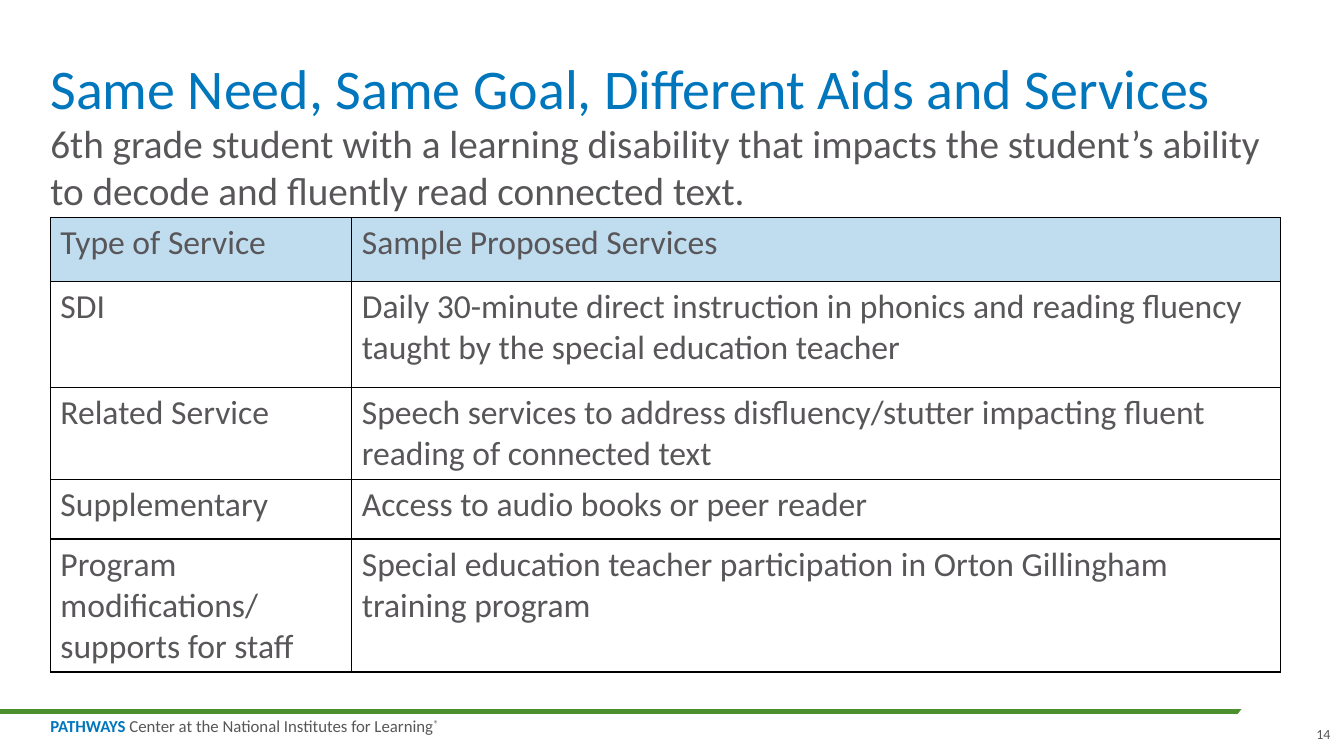
from dataclasses import dataclass

from lxml import etree
from pptx import Presentation
from pptx.dml.color import RGBColor
from pptx.enum.shapes import MSO_CONNECTOR, MSO_SHAPE
from pptx.enum.text import MSO_ANCHOR, PP_ALIGN
from pptx.oxml.ns import qn
from pptx.slide import Slide
from pptx.util import Pt

STRAIGHT = MSO_CONNECTOR.STRAIGHT
ELLIPSE = MSO_SHAPE.OVAL
TOP, BOTTOM = MSO_ANCHOR.TOP, MSO_ANCHOR.BOTTOM
LEFT, RIGHT = PP_ALIGN.LEFT, PP_ALIGN.RIGHT


@dataclass(frozen=True)
class Theme:
    font: str = "Calibri"
    blue: str = "0076BD"
    grey: str = "59565A"
    green: str = "4C902D"
    header_fill: str = "BFDDEE"
    white: str = "FFFFFF"
    border: str = "000000"
    title_size: float = 40
    body_size: float = 28
    table_size: float = 24
    footer_size: float = 12
    number_size: float = 10


@dataclass(frozen=True)
class Run:
    text: str
    color: str
    bold: bool = False
    superscript: bool = False


@dataclass(frozen=True)
class TextBlock:
    left: float
    top: float
    width: float
    height: float
    size: float
    runs: tuple[Run, ...]
    anchor: MSO_ANCHOR = TOP
    align: PP_ALIGN = LEFT
    line_spacing: float = 1.0
    wrap: bool = True


@dataclass(frozen=True)
class ServiceRow:
    height: float
    service: str
    sample: str


THEME = Theme()
MARGIN = 36
COLUMN_WIDTHS = (215.3, 663.1)
TABLE_TOP = 155.5

FOOTER = TextBlock(
    MARGIN, 513.4, 289.4, 12.2, THEME.footer_size,
    (
        Run("PATHWAYS", THEME.blue, bold=True),
        Run(" Center at the National Institutes for Learning", THEME.grey),
        Run("®", THEME.grey, superscript=True),
    ),
    line_spacing=0.85, wrap=False,
)
TITLE = TextBlock(
    MARGIN, 0, 892.8, 87.1, THEME.title_size,
    (Run("Same Need, Same Goal, Different Aids and Services", THEME.blue),),
    anchor=BOTTOM, line_spacing=0.9,
)
STUDENT = TextBlock(
    MARGIN, 85, 892.8, 56.9, THEME.body_size,
    (Run("6th grade student with a learning disability that impacts the student’s "
         "ability to decode and fluently read connected text.", THEME.grey),),
)
SLIDE_NUMBER = TextBlock(
    938.2, 518.4, 12.2, 12.2, THEME.number_size, (Run("14", THEME.grey),),
    anchor=BOTTOM, align=RIGHT, wrap=False,
)
SERVICES = (
    ServiceRow(45.4, "Type of Service", "Sample Proposed Services"),
    ServiceRow(75.9, "SDI", "Daily 30-minute direct instruction in phonics and reading "
               "fluency taught by the special education teacher"),
    ServiceRow(66, "Related Service", "Speech services to address disfluency/stutter "
               "impacting fluent reading of connected text"),
    ServiceRow(42.3, "Supplementary", "Access to audio books or peer reader"),
    ServiceRow(95, "Program modifications/ supports for staff",
               "Special education teacher participation in Orton Gillingham "
               "training program"),
)


def rgb(color: str) -> RGBColor:
    return RGBColor.from_string(color)


def add_text(slide: Slide, block: TextBlock) -> None:
    shape = slide.shapes.add_textbox(
        Pt(block.left), Pt(block.top), Pt(block.width), Pt(block.height))
    frame = shape.text_frame
    frame.word_wrap = block.wrap
    frame.vertical_anchor = block.anchor
    frame.margin_left = frame.margin_right = frame.margin_top = frame.margin_bottom = 0
    paragraph = frame.paragraphs[0]
    paragraph.alignment = block.align
    paragraph.line_spacing = block.line_spacing
    paragraph.font.name = THEME.font
    paragraph.font.size = Pt(block.size)
    for item in block.runs:
        run = paragraph.add_run()
        run.text = item.text
        run.font.name = THEME.font
        run.font.size = Pt(block.size)
        run.font.bold = item.bold
        run.font.color.rgb = rgb(item.color)
        if item.superscript:
            run.font._element.set("baseline", "30000")


def add_footer_rule(slide: Slide) -> None:
    rule = slide.shapes.add_connector(STRAIGHT, 0, Pt(508.3), Pt(936), Pt(508.3))
    rule.line.color.rgb = rgb(THEME.green)
    rule.line.width = Pt(3)
    etree.SubElement(rule._element.spPr, qn("a:effectLst"))

    # White ellipse trims the right end of the rule
    trim = slide.shapes.add_shape(ELLIPSE, Pt(875.5), Pt(487.4), Pt(85.7), Pt(41.8))
    trim.rotation = 332.1
    trim.shadow.inherit = False
    trim.fill.solid()
    trim.fill.fore_color.rgb = rgb(THEME.white)
    trim.line.fill.background()


def add_borders(cell) -> None:
    properties = cell._tc.get_or_add_tcPr()
    for index, side in enumerate(("lnL", "lnR", "lnT", "lnB")):
        line = etree.Element(qn(f"a:{side}"), w=str(Pt(1)))
        fill = etree.SubElement(line, qn("a:solidFill"))
        etree.SubElement(fill, qn("a:srgbClr"), val=THEME.border)
        properties.insert(index, line)


def add_services_table(slide: Slide, services: tuple[ServiceRow, ...]) -> None:
    height = sum(service.height for service in services)
    table = slide.shapes.add_table(
        len(services), len(COLUMN_WIDTHS), Pt(MARGIN), Pt(TABLE_TOP),
        Pt(sum(COLUMN_WIDTHS)), Pt(height)).table
    table.horz_banding = False
    for column, width in zip(table.columns, COLUMN_WIDTHS):
        column.width = Pt(width)
    for index, (row, service) in enumerate(zip(table.rows, services)):
        row.height = Pt(service.height)
        for cell, text in zip(row.cells, (service.service, service.sample)):
            cell.text = text
            cell.fill.solid()
            cell.fill.fore_color.rgb = rgb(THEME.white if index else THEME.header_fill)
            add_borders(cell)
            font = cell.text_frame.paragraphs[0].font
            font.name = THEME.font
            font.size = Pt(THEME.table_size)
            font.bold = False
            font.color.rgb = rgb(THEME.grey)


def main() -> None:
    presentation = Presentation()
    presentation.slide_width, presentation.slide_height = Pt(960), Pt(540)
    slide = presentation.slides.add_slide(presentation.slide_layouts[6])

    # Footer
    add_footer_rule(slide)
    add_text(slide, FOOTER)

    # Heading and student description
    add_text(slide, TITLE)
    add_text(slide, STUDENT)

    # Services and slide number
    add_services_table(slide, SERVICES)
    add_text(slide, SLIDE_NUMBER)

    presentation.save("out.pptx")


if __name__ == "__main__":
    main()
